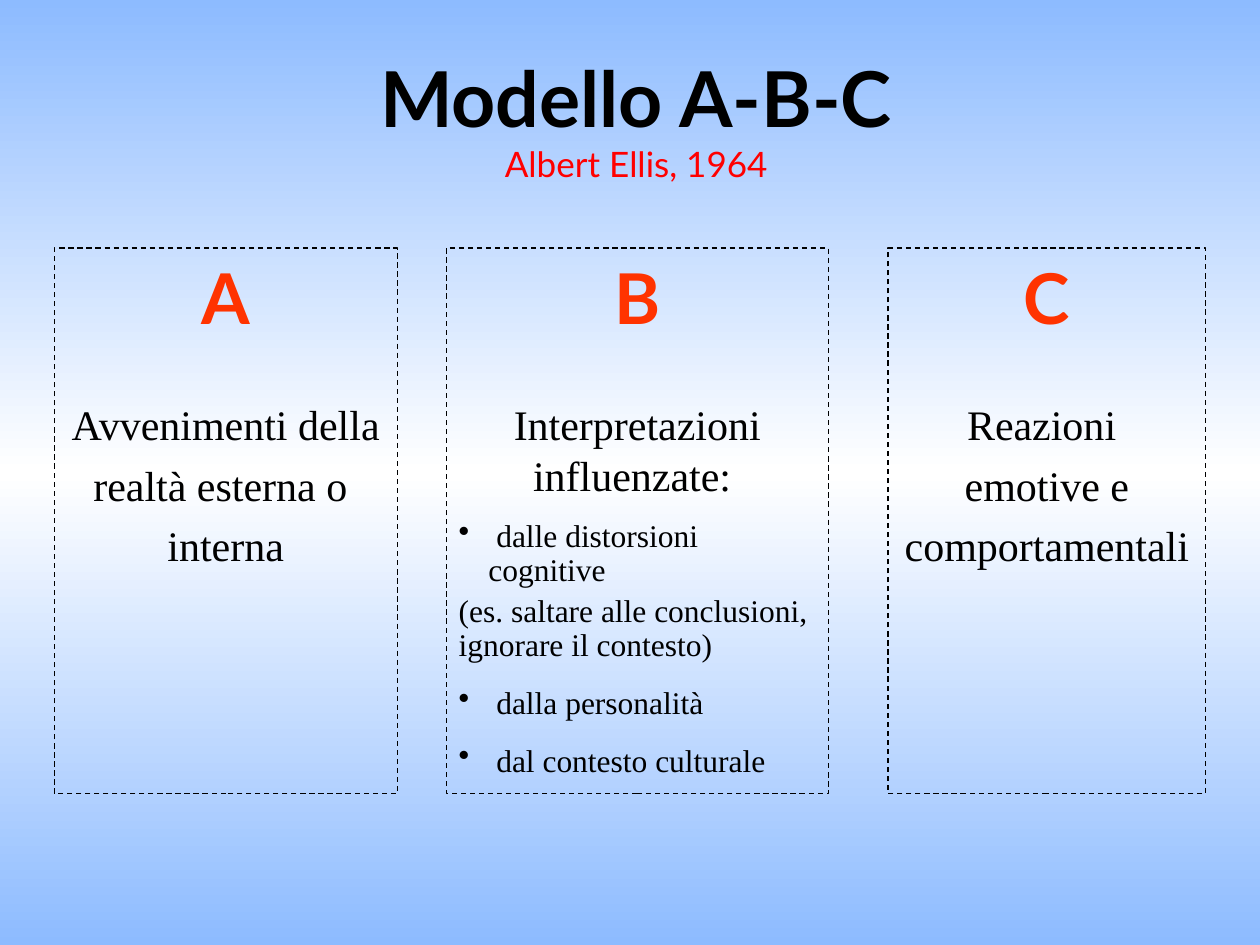
from copy import deepcopy

from lxml import etree
from pptx import Presentation
from pptx.dml.color import RGBColor
from pptx.enum import dml, shapes, text
from pptx.oxml.ns import qn
from pptx.util import Pt

COLORS = {"sky": "8DBBFF", "white": "FFFFFF", "ink": "000000",
          "letter": "FF3300", "author": "FF0000"}
FONTS = {
    "title": dict(name="Lato", size=Pt(44), bold=True),
    "author": dict(name="Lato", size=Pt(20), bold=False),
    "letter": dict(name="Lato", size=Pt(40), bold=True),
    "body": dict(name="Times New Roman", size=Pt(24), bold=False),
    "detail": dict(name="Times New Roman", size=Pt(18), bold=False),
}
CENTER, LEFT = text.PP_ALIGN.CENTER, text.PP_ALIGN.LEFT
HANGING = 27
BULLET_INDENT = 17
LETTER_GAP = 34.6
BODY_GAP = 5.8
BOX_TOP, BOX_HEIGHT = 141.8, 311.8


def assign(target, values):
    for key, value in values.items():
        setattr(target, key, value)


class Slide:
    def __init__(self, deck):
        self.slide = deck.slides.add_slide(deck.slide_layouts[6])

    def background(self, *colors):
        fill = self.slide.background.fill
        fill.gradient()
        fill.gradient_angle = 270
        stops = self.slide.element.find(".//" + qn("a:gsLst"))
        while len(stops) < len(colors):
            stops.append(deepcopy(stops[0]))
        for i, (stop, color) in enumerate(zip(fill.gradient_stops, colors)):
            stop.position = i / (len(colors) - 1)
            stop.color.rgb = RGBColor.from_string(COLORS[color])

    def run(self, paragraph, words, font, color="ink"):
        run = paragraph.add_run()
        run.text = words
        assign(run.font, FONTS[font])
        run.font.color.rgb = RGBColor.from_string(COLORS[color])

    def title(self, heading, author, left, top, width, height):
        frame = self.slide.shapes.add_textbox(
            Pt(left), Pt(top), Pt(width), Pt(height)).text_frame
        assign(frame, dict(word_wrap=True, vertical_anchor=text.MSO_ANCHOR.MIDDLE))
        line = frame.paragraphs[0]
        line.alignment = CENTER
        self.run(line, heading, "title")
        line.add_line_break()
        self.run(line, author, "author", "author")

    def box(self, left, width):
        box = self.slide.shapes.add_shape(
            shapes.MSO_SHAPE.RECTANGLE, Pt(left), Pt(BOX_TOP), Pt(width), Pt(BOX_HEIGHT))
        box.shadow.inherit = False
        box.fill.background()
        box.line.color.rgb = RGBColor.from_string(COLORS["ink"])
        assign(box.line, dict(width=Pt(0.75), dash_style=dml.MSO_LINE.DASH))
        assign(box.text_frame, dict(word_wrap=True, vertical_anchor=text.MSO_ANCHOR.TOP))
        return box.text_frame

    def paragraph(self, frame, words, font="body", gap=BODY_GAP, color="ink",
                  align=CENTER, spacing=1.0, indent=0, bullet=False):
        first = frame.paragraphs[0]
        line = frame.add_paragraph() if first.runs else first
        assign(line, dict(alignment=align, line_spacing=spacing, space_before=Pt(gap)))
        properties = line._p.get_or_add_pPr()
        properties.set("marL", str(Pt(indent)))
        properties.set("indent", str(Pt(-indent)))
        if bullet:
            etree.SubElement(properties, qn("a:buChar")).set("char", "•")
        self.run(line, words, font, color)

    def column(self, letter, left, width, lines, indent=0):
        frame = self.box(left, width)
        self.paragraph(frame, letter, "letter", 0, "letter", indent=indent)
        for i, words in enumerate(lines):
            self.paragraph(frame, words, gap=BODY_GAP if i else LETTER_GAP, indent=indent)
        return frame


def main():
    deck = Presentation()
    assign(deck, dict(slide_width=Pt(720), slide_height=Pt(540)))
    model = Slide(deck)
    model.background("sky", "white", "sky")

    model.column("C", 507.5, 181.5,
                 ["Reazioni ", "emotive e", "comportamentali"], HANGING)
    model.column("A", 31, 196,
                 ["Avvenimenti della", "realtà esterna o ", "interna"], HANGING)
    interpretations = model.column("B", 255, 218.4, ["Interpretazioni influenzate: "])
    for words, gap, spacing, bullet in [
        (" dalle distorsioni cognitive", 11.5, 0.9, True),
        ("(es. saltare alle conclusioni, ignorare il contesto)", 4.3, 0.9, False),
        (" dalla personalità", 11, 1.0, True),
        (" dal contesto culturale", 11.5, 1.0, True),
    ]:
        model.paragraph(interpretations, words, "detail", gap, align=LEFT, spacing=spacing,
                        indent=BULLET_INDENT if bullet else 0, bullet=bullet)

    model.title("Modello A-B-C", "Albert Ellis, 1964", 57.6, 22.3, 612, 90)
    deck.save("out.pptx")


if __name__ == "__main__":
    main()
